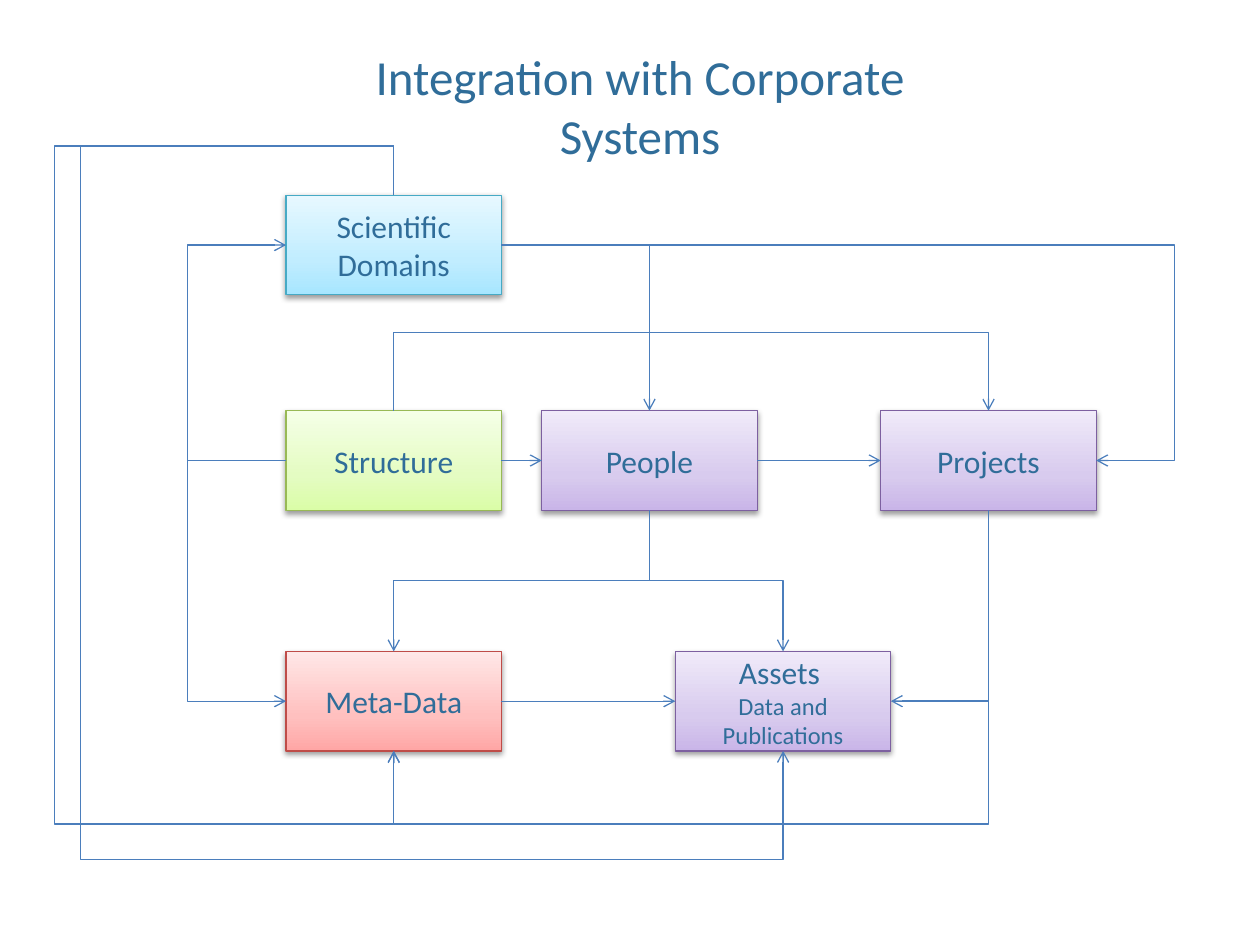
import copy

import pptx
import pptx.dml.color
import pptx.enum.shapes
import pptx.enum.text
import pptx.oxml
import pptx.oxml.ns
import pptx.util
from pptx.util import Inches

FONT = "Calibri"
COLORS = {"text": "306D99", "route": "4B7EBC", "shadow": "000000"}
THEMES = {
    "blue": ("46AAC5", ("A7E6FF", "C1EDFF", "E7F8FF")),
    "green": ("98B955", ("DAFDA7", "E4FCC2", "F5FFE7")),
    "purple": ("7D60A0", ("C9B5E8", "D8CBEE", "F0EAF9")),
    "red": ("BF4C48", ("FFA6A5", "FFC0BF", "FFE7E7")),
}
STOPS = (0, 0.35, 1)
NODE_WIDTH, NODE_HEIGHT = 1.71, 0.79

COLUMN, ROWS = 1.84, (0.39, 2.1, 4.01)
NODES = {
    "domains": (COLUMN, ROWS[0], "blue", ["Scientific Domains"]),
    "structure": (COLUMN, ROWS[1], "green", ["Structure"]),
    "people": (3.87, ROWS[1], "purple", ["People"]),
    "projects": (6.56, ROWS[1], "purple", ["Projects"]),
    "metadata": (COLUMN, ROWS[2], "red", ["Meta-Data"]),
    "assets": (4.93, ROWS[2], "purple", ["Assets ", "Data and Publications"]),
}
SIDES = {"left": (0, 0.5), "right": (1, 0.5), "top": (0.5, 0), "bottom": (0.5, 1)}

LEFT_LANE, RIGHT_LANE, INNER_LANE = 1.06, 8.89, 0.21
UPPER_LANE, MIDDLE_LANE, BOTTOM_LANE, LOWEST_LANE = 1.48, 3.45, 5.38, 5.66
ROUTES = [
    ("structure", "right", [], "people", "left"),
    ("people", "right", [], "projects", "left"),
    ("metadata", "right", [], "assets", "left"),
    ("people", "bottom", [MIDDLE_LANE], "metadata", "top"),
    ("people", "bottom", [MIDDLE_LANE], "assets", "top"),
    ("structure", "left", [LEFT_LANE], "metadata", "left"),
    ("structure", "left", [LEFT_LANE], "domains", "left"),
    ("structure", "top", [UPPER_LANE], "projects", "top"),
    ("projects", "bottom", [BOTTOM_LANE], "metadata", "bottom"),
    ("projects", "bottom", [], "assets", "right"),
    ("domains", "right", [], "people", "top"),
    ("domains", "right", [RIGHT_LANE], "projects", "right"),
    ("domains", "top", [0, INNER_LANE, LOWEST_LANE], "assets", "bottom"),
    ("domains", "top", [0, 0, BOTTOM_LANE], "metadata", "bottom"),
]


def rgb(value):
    return pptx.dml.color.RGBColor.from_string(value)


def effect_list(content=""):
    return pptx.oxml.parse_xml(
        f'<a:effectLst {pptx.oxml.ns.nsdecls("a")}>{content}</a:effectLst>')


def write_text(shape, lines, sizes):
    frame = shape.text_frame
    frame.word_wrap = True
    frame.vertical_anchor = pptx.enum.text.MSO_ANCHOR.MIDDLE
    frame.text = "\n".join(lines)
    for para, size in zip(frame.paragraphs, sizes):
        para.alignment = pptx.enum.text.PP_ALIGN.CENTER
        for span in para.runs:
            span.font.name = FONT
            span.font.size = pptx.util.Pt(size)
            span.font.color.rgb = rgb(COLORS["text"])


def add_title(page, left, top, width, height):
    box = page.shapes.add_textbox(
        Inches(left), Inches(top), Inches(width), Inches(height))
    write_text(box, ["Integration with Corporate Systems"], [28])


def add_node(page, left, top, theme, lines):
    node = page.shapes.add_shape(
        pptx.enum.shapes.MSO_SHAPE.RECTANGLE, Inches(left), Inches(top),
        Inches(NODE_WIDTH), Inches(NODE_HEIGHT))
    border, shades = THEMES[theme]
    node.fill.gradient()
    node.fill.gradient_angle = 90
    stop_list = node._element.spPr.find(".//" + pptx.oxml.ns.qn("a:gsLst"))
    stop_list.append(copy.deepcopy(stop_list[0]))
    for stop, position, shade in zip(node.fill.gradient_stops, STOPS, shades):
        stop.position = position
        stop.color.rgb = rgb(shade)
    node.line.color.rgb = rgb(border)
    node.line.width = pptx.util.Pt(0.75)
    node._element.spPr.append(effect_list(
        f'<a:outerShdw blurRad="{pptx.util.Pt(3.1)}" dist="{pptx.util.Pt(1.6)}" '
        'dir="5400000" rotWithShape="0">'
        f'<a:srgbClr val="{COLORS["shadow"]}"><a:alpha val="38000"/></a:srgbClr>'
        '</a:outerShdw>'))
    write_text(node, lines, [18, 14])


def anchor(name, side):
    x, y = NODES[name][:2]
    across, down = SIDES[side]
    return x + across * NODE_WIDTH, y + down * NODE_HEIGHT


def route_points(source, source_side, lanes, target, target_side):
    start, end = anchor(source, source_side), anchor(target, target_side)
    axis = 0 if source_side in ("left", "right") else 1
    points, current = [start], list(start)
    for lane in lanes:
        current[axis] = lane
        points.append(tuple(current))
        axis = 1 - axis
    current[axis] = end[axis]
    if tuple(current) != end:
        points.append(tuple(current))
    return points + [end]


def add_route(page, points):
    points = [(Inches(x), Inches(y)) for x, y in points]
    if len(points) == 2:
        route = page.shapes.add_connector(
            pptx.enum.shapes.MSO_CONNECTOR.STRAIGHT, *points[0], *points[1])
    else:
        builder = page.shapes.build_freeform(*points[0])
        builder.add_line_segments(points[1:], close=False)
        route = builder.convert_to_shape()
        route.fill.background()
    route.line.color.rgb = rgb(COLORS["route"])
    route.line.width = pptx.util.Pt(0.75)
    route.line._get_or_add_ln().append(pptx.oxml.parse_xml(
        f'<a:tailEnd {pptx.oxml.ns.nsdecls("a")} type="arrow"/>'))
    route._element.spPr.append(effect_list())


def add_diagram(page, left, top):
    for x, y, theme, lines in NODES.values():
        add_node(page, left + x, top + y, theme, lines)
    for route in ROUTES:
        add_route(page, [(left + x, top + y) for x, y in route_points(*route)])


def main():
    deck = pptx.Presentation()
    deck.slide_width, deck.slide_height = Inches(10), Inches(7.5)
    page = deck.slides.add_slide(deck.slide_layouts[6])
    add_title(page, 2.83, 0.21, 4.5, 1.25)
    add_diagram(page, 0.43, 1.16)
    deck.save("out.pptx")


if __name__ == "__main__":
    main()
